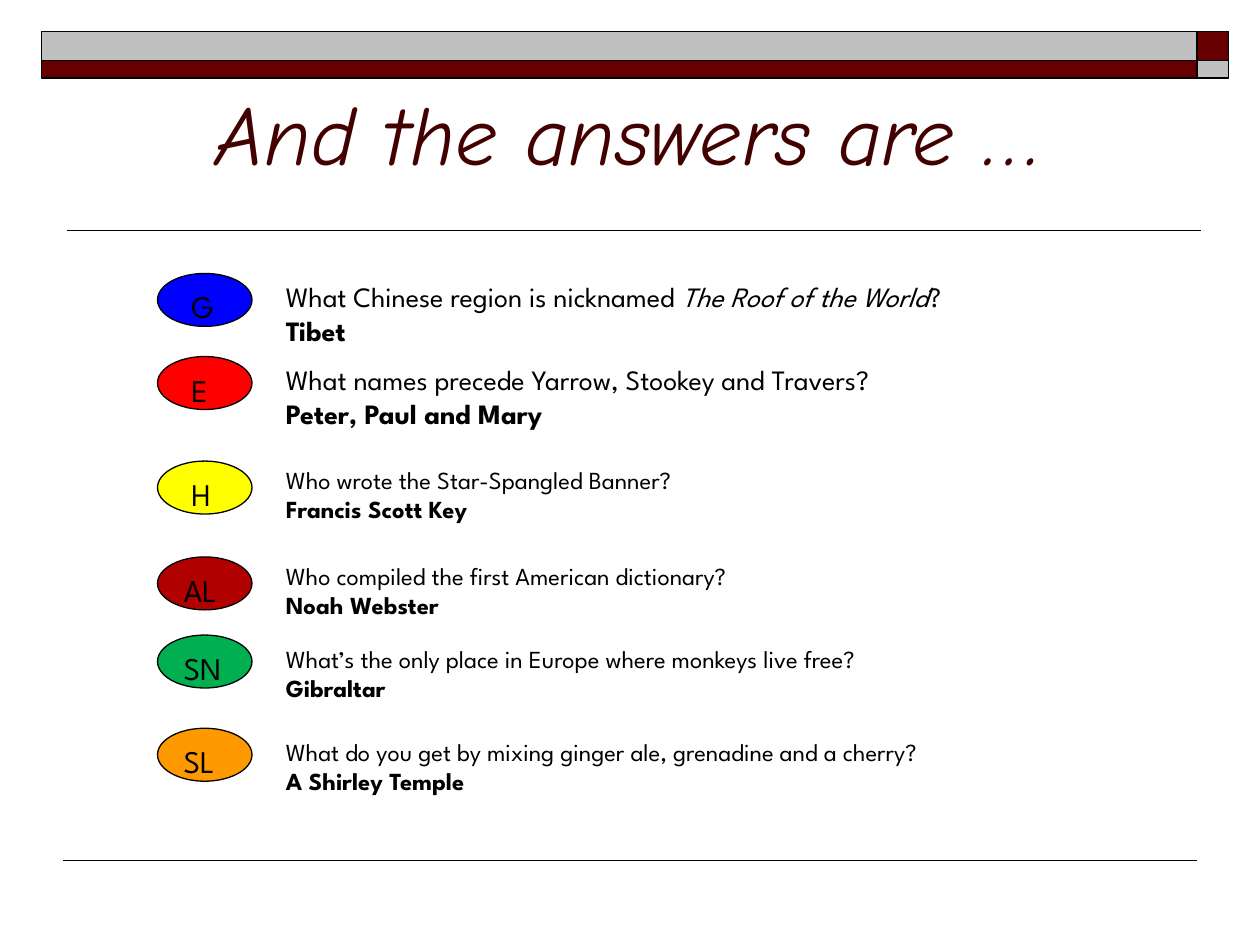
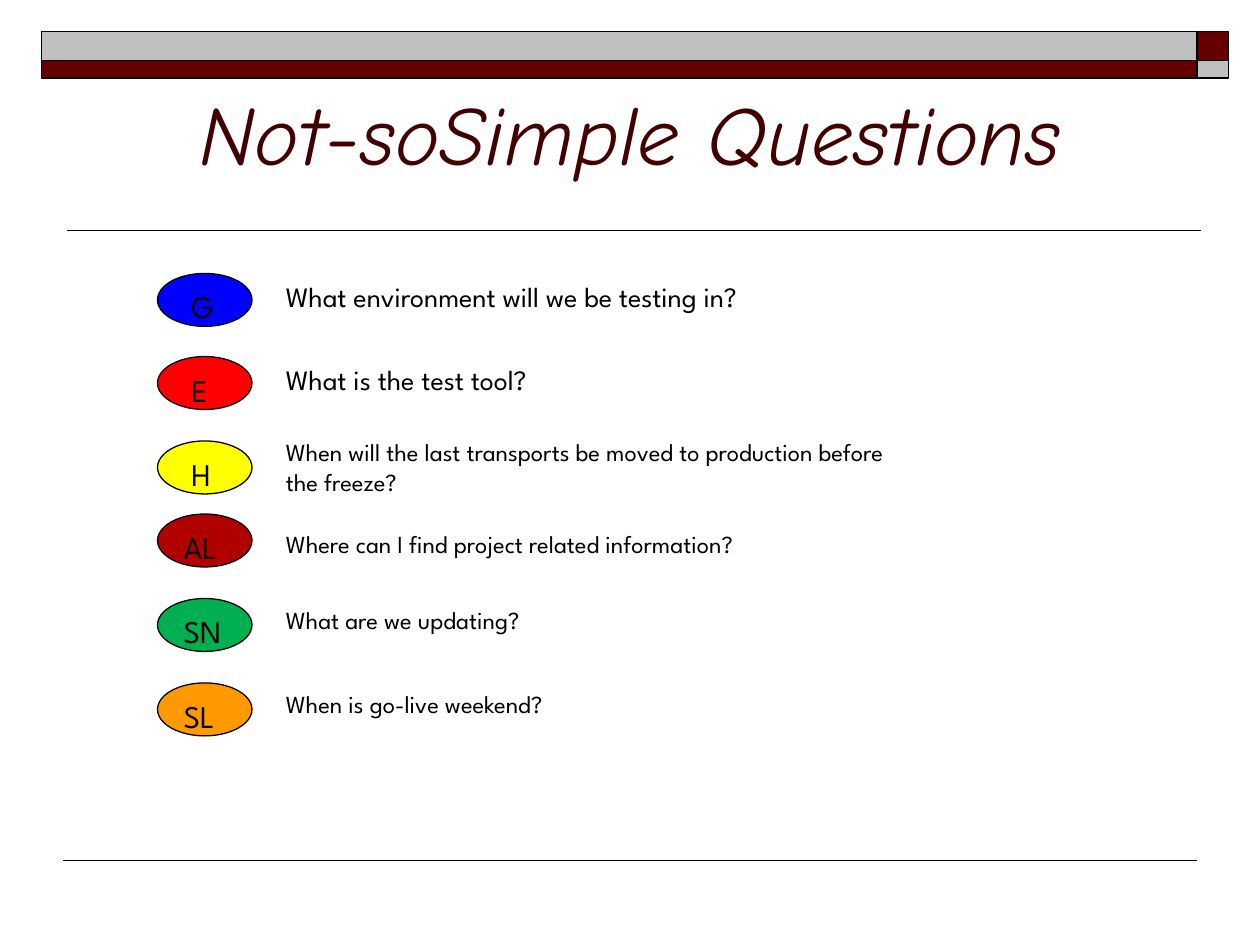
from lxml import etree
from pptx import Presentation
from pptx.dml.color import RGBColor
from pptx.enum.shapes import MSO_CONNECTOR, MSO_SHAPE
from pptx.enum.text import MSO_ANCHOR, MSO_AUTO_SIZE, PP_ALIGN
from pptx.oxml.ns import qn
from pptx.util import Inches, Pt

RECTANGLE, OVAL = MSO_SHAPE.RECTANGLE, MSO_SHAPE.OVAL
STRAIGHT = MSO_CONNECTOR.STRAIGHT
TOP, BOTTOM = MSO_ANCHOR.TOP, MSO_ANCHOR.BOTTOM
GROW = MSO_AUTO_SIZE.SHAPE_TO_FIT_TEXT
LEFT, CENTER = PP_ALIGN.LEFT, PP_ALIGN.CENTER

COLORS = {
    "black": "000000", "title": "420000", "maroon": "660000", "silver": "C0C0C0",
    "blue": "0000FF", "red": "FF0000", "yellow": "FFFF00",
    "crimson": "B10000", "green": "00B050", "orange": "FF9900",
}
TITLE_FONT, BODY_FONT = "Comic Neue", "League Spartan"

# Left, top, width, height, color
BANDS = [
    (9.5, 0.25, 0.25, 0.23, "maroon"),
    (0.33, 0.25, 9.17, 0.23, "silver"),
    (0.33, 0.48, 9.17, 0.14, "maroon"),
    (9.5, 0.48, 0.25, 0.14, "silver"),
]
# Left, right, y, weight in points
RULES = [(0.53, 9.53, 1.83, 1), (0.5, 9.5, 6.83, 0.75)]

CATEGORIES = [("G", "blue"), ("E", "red"), ("H", "yellow"),
              ("AL", "crimson"), ("SN", "green"), ("SL", "orange")]
QUESTION_SIZES = [16, 16, 14, 14, 14, 14]

# Each row: badge top, text top, text width, line count, question, answer.
# A question is a list of (text, italic) runs.
SLIDES = [
    ("And the answers are …", [
        (2.17, 2.17, 7.33, 2, [("What Chinese region is nicknamed ", False),
                               ("The Roof of the World", True), ("?", False)], "Tibet"),
        (2.83, 2.83, 6.58, 2, [("What names precede Yarrow, Stookey and Travers?", False)],
         "Peter, Paul and Mary"),
        (3.66, 3.64, 7.75, 2, [("Who wrote the Star-Spangled Banner?", False)],
         "Francis Scott Key"),
        (4.42, 4.4, 7.83, 2, [("Who compiled the first American dictionary?", False)],
         "Noah Webster"),
        (5.04, 5.06, 6.5, 2,
         [("What’s the only place in Europe where monkeys live free?", False)], "Gibraltar"),
        (5.78, 5.8, 7.17, 2,
         [("What do you get by mixing ginger ale, grenadine and a cherry?", False)],
         "A Shirley Temple"),
    ]),
    ("Not-soSimple Questions", [
        (2.17, 2.17, 6.17, 1, [("What environment will we be testing in?", False)], None),
        (2.83, 2.83, 4.83, 1, [("What is the test tool?", False)], None),
        (3.5, 3.42, 5.17, 2,
         [("When will the last transports be moved to production before the freeze?", False)],
         None),
        (4.08, 4.15, 7.08, 1, [("Where can I find project related information?", False)], None),
        (4.75, 4.75, 6.5, 1, [("What are we updating?", False)], None),
        (5.42, 5.42, 7.17, 1, [("When is go-live weekend?", False)], None),
    ]),
]


def add_filled_shape(slide, preset, left, top, width, height, color, weight):
    shape = slide.shapes.add_shape(preset, Inches(left), Inches(top),
                                   Inches(width), Inches(height))
    shape.shadow.inherit = False
    shape.fill.solid()
    shape.fill.fore_color.rgb = RGBColor.from_string(COLORS[color])
    shape.line.color.rgb = RGBColor.from_string(COLORS["black"])
    shape.line.width = Pt(weight)
    return shape


def add_run(paragraph, text, size, font=BODY_FONT, color="black", bold=False, italic=False):
    run = paragraph.add_run()
    run.text = text
    run.font.name = font
    run.font.size = Pt(size)
    run.font.bold = bold
    run.font.italic = italic
    run.font.color.rgb = RGBColor.from_string(COLORS[color])


presentation = Presentation()
presentation.slide_width = Inches(10)
presentation.slide_height = Inches(7.5)

for title, rows in SLIDES:
    slide = presentation.slides.add_slide(presentation.slide_layouts[6])

    for left, top, width, height, color in BANDS:
        add_filled_shape(slide, RECTANGLE, left, top, width, height, color, 1)

    for left, right, y, weight in RULES:
        rule = slide.shapes.add_connector(STRAIGHT, Inches(left), Inches(y),
                                          Inches(right), Inches(y))
        rule.line.color.rgb = RGBColor.from_string(COLORS["black"])
        rule.line.width = Pt(weight)
        etree.SubElement(rule._element.spPr, qn("a:effectLst"))

    title_box = slide.shapes.add_textbox(Inches(0.5), Inches(0.25), Inches(9), Inches(1.25))
    title_frame = title_box.text_frame
    title_frame.word_wrap = True
    title_frame.vertical_anchor = BOTTOM
    title_frame.paragraphs[0].alignment = CENTER
    add_run(title_frame.paragraphs[0], title, 48, TITLE_FONT, "title", italic=True)

    for (letters, color), size, row in zip(CATEGORIES, QUESTION_SIZES, rows):
        badge_top, text_top, width, line_count, question, answer = row

        badge = add_filled_shape(slide, OVAL, 1.25, badge_top, 0.75, 0.42, color, 0.75)
        badge_frame = badge.text_frame
        badge_frame.word_wrap = True
        badge_frame.vertical_anchor = TOP
        badge_frame.margin_left = Inches(0.16 if len(letters) == 1 else 0.1)
        badge_frame.paragraphs[0].alignment = LEFT
        add_run(badge_frame.paragraphs[0], letters, 18)

        height = 0.1 + line_count * size * 1.2 / 72
        question_box = slide.shapes.add_textbox(Inches(2.17), Inches(text_top),
                                                Inches(width), Inches(height))
        question_frame = question_box.text_frame
        question_frame.word_wrap = True
        question_frame.auto_size = GROW
        for text, italic in question:
            add_run(question_frame.paragraphs[0], text, size, italic=italic)
        if answer:
            add_run(question_frame.add_paragraph(), answer, size, bold=True)

presentation.save("out.pptx")
